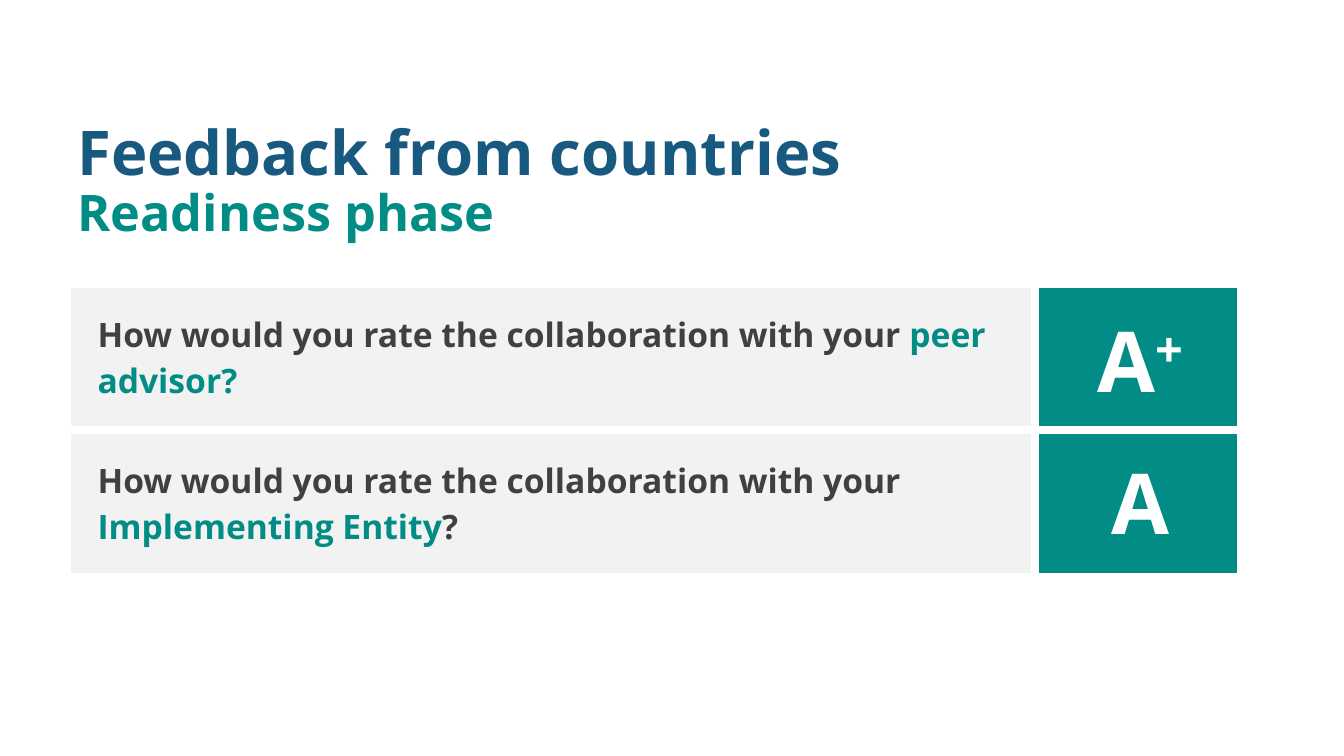
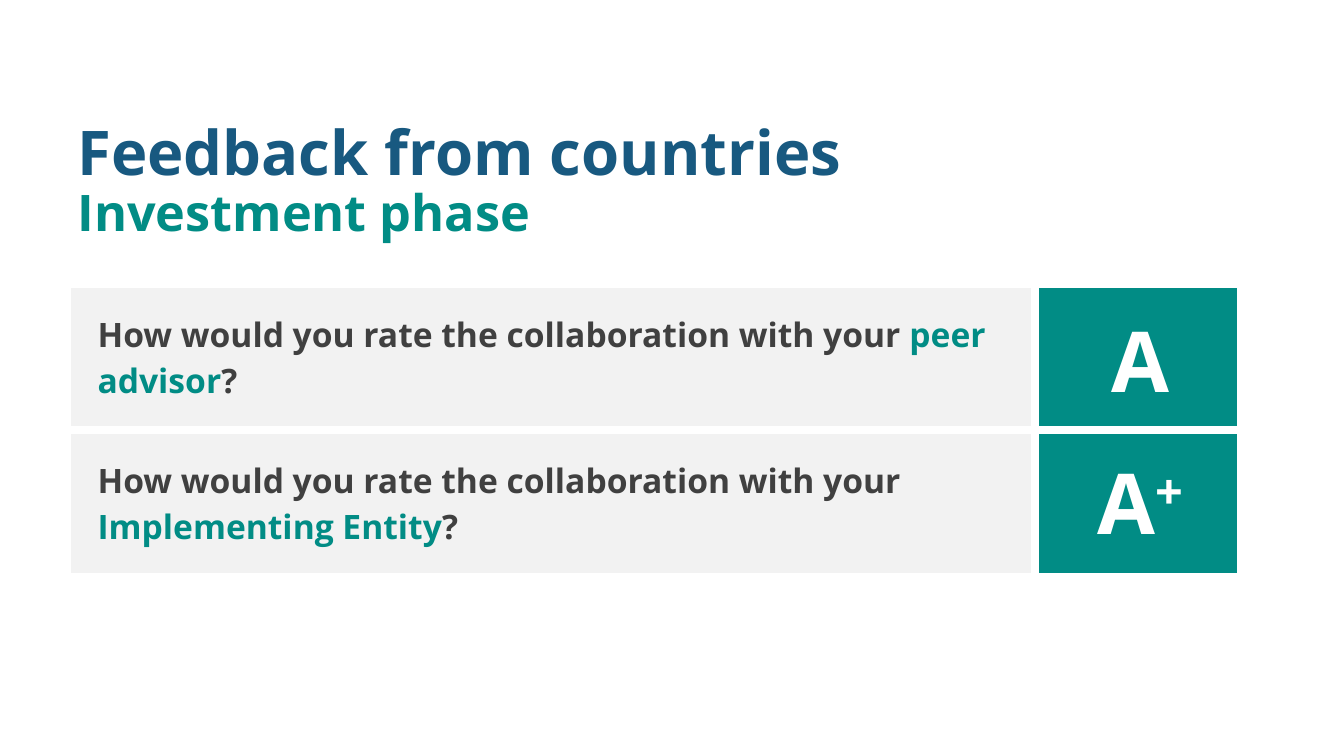
from lxml.etree import SubElement
from pptx import Presentation
from pptx.dml.color import RGBColor
from pptx.enum.text import MSO_ANCHOR, MSO_AUTO_SIZE, PP_ALIGN
from pptx.oxml.ns import qn
from pptx.util import Cm, Pt

BLUE = RGBColor(0x18, 0x59, 0x80)
TEAL = RGBColor(0x01, 0x8C, 0x85)
DARK = RGBColor(0x40, 0x40, 0x40)
PALE = RGBColor(0xF2, 0xF2, 0xF2)
WHITE = RGBColor(0xFF, 0xFF, 0xFF)

FACE = "Open Sans"
LEFT = Cm(1.7)
TOP = Cm(7.16)
WIDTHS = Cm(24.38), Cm(5.18)
ROW = Cm(3.68)

ASK = "How would you rate the collaboration with your "
ENTITY = "Implementing Entity", "?"
PHASES = [
    ("Readiness phase", [("peer advisor?", "", "A", "+"), (*ENTITY, "A", "")]),
    ("Investment phase", [("peer advisor", "?", "A", ""), (*ENTITY, "A", "+")]),
]


def set_font(font, size, color=None):
    font.name = FACE
    font.size = Pt(size)
    font.bold = True
    if color is not None:
        font.color.rgb = color


def add_run(para, text, color=None):
    run = para.add_run()
    run.text = text
    if color is not None:
        run.font.color.rgb = color
    return run


def set_title(slide, phase):
    title = slide.shapes.title
    title.left, title.top = LEFT, Cm(2.03)
    title.width, title.height = Cm(22.43), Cm(5.13)
    frame = title.text_frame
    frame.auto_size = MSO_AUTO_SIZE.NONE
    frame.word_wrap = True
    frame.vertical_anchor = MSO_ANCHOR.MIDDLE
    para = frame.paragraphs[0]
    para.alignment = PP_ALIGN.LEFT
    para.line_spacing = 0.9
    set_font(para.font, 44)
    add_run(para, "Feedback from countries", BLUE)
    para.add_line_break()
    add_run(para, phase, TEAL).font.size = Pt(36)


def style_cell(cell, color):
    props = cell._tc.get_or_add_tcPr()
    for side in ("a:lnL", "a:lnR", "a:lnT", "a:lnB"):
        line = SubElement(props, qn(side), w=str(Pt(6)))
        fill = SubElement(line, qn("a:solidFill"))
        SubElement(fill, qn("a:srgbClr"), val=str(WHITE))
    cell.fill.solid()
    cell.fill.fore_color.rgb = color
    cell.vertical_anchor = MSO_ANCHOR.MIDDLE


def add_question(cell, topic, tail):
    cell.margin_left = Cm(0.76)
    para = cell.text_frame.paragraphs[0]
    set_font(para.font, 24, DARK)
    add_run(para, ASK, DARK)
    add_run(para, topic, TEAL)
    if tail:
        add_run(para, tail, DARK)


def add_ratings(slide, rows):
    frame = slide.shapes.add_table(
        len(rows), len(WIDTHS), LEFT, TOP, sum(WIDTHS), ROW * len(rows))
    table = frame.table
    table.first_row = table.horz_banding = False
    for column, width in zip(table.columns, WIDTHS):
        column.width = width
    for index, (topic, tail, grade, sign) in enumerate(rows):
        table.rows[index].height = ROW
        for cell, color in zip(table.rows[index].cells, (PALE, TEAL)):
            style_cell(cell, color)
        add_question(table.cell(index, 0), topic, tail)
        add_grade(slide, Cm(7.65 + 3.58 * index), grade, sign)


def add_grade(slide, top, grade, sign):
    box = slide.shapes.add_textbox(Cm(26.19), top, Cm(5.08), Cm(2.82))
    frame = box.text_frame
    frame.word_wrap = True
    frame.auto_size = MSO_AUTO_SIZE.SHAPE_TO_FIT_TEXT
    para = frame.paragraphs[0]
    para.alignment = PP_ALIGN.CENTER
    set_font(para.font, 60, WHITE)
    add_run(para, grade, WHITE)
    if sign:
        run = add_run(para, sign, WHITE)
        run._r.get_or_add_rPr().set("baseline", "30000")


def main():
    deck = Presentation()
    deck.slide_width, deck.slide_height = Cm(33.87), Cm(19.05)
    for phase, rows in PHASES:
        slide = deck.slides.add_slide(deck.slide_layouts[5])
        set_title(slide, phase)
        add_ratings(slide, rows)
    deck.save("out.pptx")


if __name__ == "__main__":
    main()
